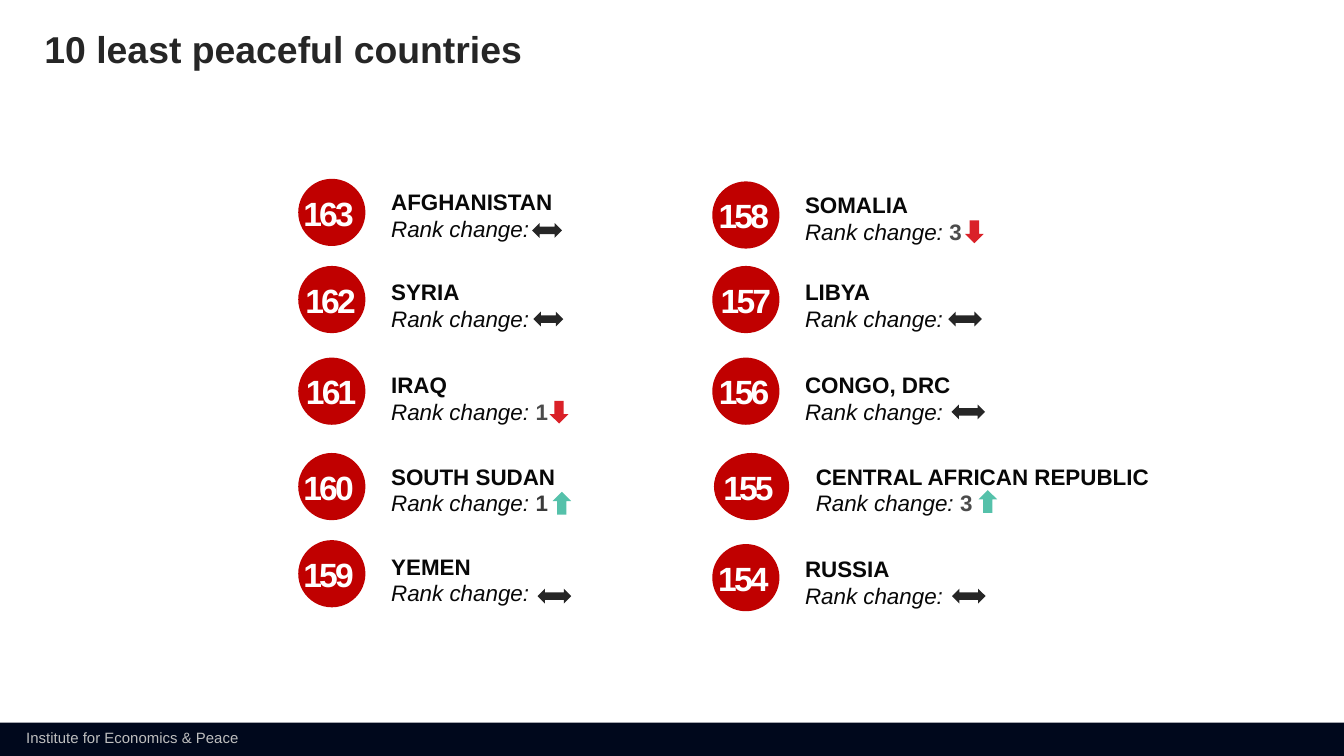
"""Build the slide that ranks the ten least peaceful countries."""
from dataclasses import dataclass

from pptx import Presentation
from pptx.dml.color import RGBColor
from pptx.enum.shapes import MSO_SHAPE
from pptx.enum.text import MSO_ANCHOR, MSO_AUTO_SIZE, PP_ALIGN
from pptx.shapes.autoshape import Shape
from pptx.shapes.shapetree import GroupShapes, SlideShapes
from pptx.text.text import TextFrame, _Paragraph, _Run
from pptx.util import Pt

RECTANGLE = MSO_SHAPE.RECTANGLE
OVAL = MSO_SHAPE.OVAL
UP_ARROW = MSO_SHAPE.UP_ARROW
LEVEL_ARROW = MSO_SHAPE.LEFT_RIGHT_ARROW
TOP, MIDDLE = MSO_ANCHOR.TOP, MSO_ANCHOR.MIDDLE
NO_FIT = MSO_AUTO_SIZE.NONE
LEFT, CENTER = PP_ALIGN.LEFT, PP_ALIGN.CENTER

WHITE = RGBColor(0xFF, 0xFF, 0xFF)
NAVY = RGBColor(0x00, 0x08, 0x1C)
SILVER = RGBColor(0xBF, 0xBF, 0xBF)
CHARCOAL = RGBColor(0x26, 0x26, 0x26)
INK = RGBColor(0x08, 0x08, 0x08)
GRAY = RGBColor(0x4B, 0x4B, 0x4B)
DARK_GRAY = RGBColor(0x3A, 0x3A, 0x3A)
CRIMSON = RGBColor(0xC0, 0x00, 0x00)
RED = RGBColor(0xDA, 0x21, 0x28)
GREEN = RGBColor(0x55, 0xC1, 0xAA)

FONT = "Arial"
BADGE_SIZE = 36
NUMBER_WIDTH, NUMBER_HEIGHT, NUMBER_DROP = 52, 28.8, 3.8
LABEL_HEIGHT = 34.5
LEFT_BADGE, RIGHT_BADGE = 159.8, 381.6
LEFT_LABEL, RIGHT_LABEL = 203.8, 425.5


@dataclass(frozen=True)
class Marker:
    """Arrow that shows the direction of a rank change."""
    kind: MSO_SHAPE
    color: RGBColor
    height: float
    rotation: float = 0


LEVEL = Marker(LEVEL_ARROW, CHARCOAL, 7.9)
BETTER = Marker(UP_ARROW, GREEN, 12.2)
WORSE = Marker(UP_ARROW, RED, 12.2, 180)


@dataclass(frozen=True)
class Country:
    """Ranked country with its positions in points."""
    rank: str
    name: str
    badge_left: float
    badge_top: float
    number_center: float
    label_left: float
    label_top: float
    label_width: float
    marker: Marker
    marker_left: float
    marker_top: float
    marker_width: float
    change: str = ""
    change_color: RGBColor = GRAY
    badge_width: float = BADGE_SIZE


COUNTRIES = (
    Country("163", "AFGHANISTAN", LEFT_BADGE, 95.8, 176, LEFT_LABEL, 97.9, 100.8,
            LEVEL, 285.1, 119.5, 16),
    Country("162", "SYRIA", LEFT_BADGE, 142.5, 177.1, LEFT_LABEL, 146.1, 100.8,
            LEVEL, 285.8, 167, 16),
    Country("161", "IRAQ", LEFT_BADGE, 191.6, 177.4, LEFT_LABEL, 195.8, 100.8,
            WORSE, 294.5, 214.7, 10, "1"),
    Country("160", "SOUTH SUDAN", LEFT_BADGE, 242.7, 176, LEFT_LABEL, 245, 100.8,
            BETTER, 296, 263.5, 10, "1", DARK_GRAY),
    Country("159", "YEMEN", LEFT_BADGE, 289.4, 176, LEFT_LABEL, 293.2, 149.8,
            LEVEL, 288, 315.4, 18),
    Country("158", "SOMALIA", RIGHT_BADGE, 97.2, 398.5, RIGHT_LABEL, 99.3, 128.2,
            WORSE, 517, 118.1, 10, "3"),
    Country("157", "LIBYA", RIGHT_BADGE, 142.5, 399.6, RIGHT_LABEL, 146.1, 190.8,
            LEVEL, 508, 167, 18),
    Country("156", "CONGO, DRC", RIGHT_BADGE, 191.6, 398.7, RIGHT_LABEL, 195.8, 149.8,
            LEVEL, 509.7, 216.7, 18),
    Country("155", "CENTRAL AFRICAN REPUBLIC", 382.5, 242.7, 401, 431.3, 245, 192.2,
            BETTER, 524.2, 262.6, 10, "3", GRAY, 40.3),
    Country("154", "RUSSIA", RIGHT_BADGE, 291.5, 398.3, RIGHT_LABEL, 294.7, 149.8,
            LEVEL, 510, 315.4, 18),
)


def add_span(para: _Paragraph, text: str, size: float, color: RGBColor,
             bold: bool = False, italic: bool = False) -> _Run:
    """Append one formatted run to a paragraph."""
    span = para.add_run()
    span.text = text
    span.font.name = FONT
    span.font.size = Pt(size)
    span.font.color.rgb = color
    span.font.bold = bold
    span.font.italic = italic
    return span


def set_frame(frame: TextFrame, side: float, edge: float,
              anchor: MSO_ANCHOR = TOP, wrap: bool = True) -> None:
    """Set the margins, anchor and wrapping of a text frame."""
    frame.margin_left = frame.margin_right = Pt(side)
    frame.margin_top = frame.margin_bottom = Pt(edge)
    frame.vertical_anchor = anchor
    frame.auto_size = NO_FIT
    frame.word_wrap = wrap


def add_solid(shapes: GroupShapes | SlideShapes, kind: MSO_SHAPE, left: float, top: float,
              width: float, height: float, color: RGBColor) -> Shape:
    """Draw a plain filled shape without an outline."""
    shape = shapes.add_shape(kind, Pt(left), Pt(top), Pt(width), Pt(height))
    shape.shadow.inherit = False
    shape.fill.solid()
    shape.fill.fore_color.rgb = color
    shape.line.fill.background()
    return shape


def add_country(shapes: SlideShapes, country: Country) -> None:
    """Draw one country as a group of label, badge, number and arrow."""
    parts = shapes.add_group_shape().shapes
    label = parts.add_textbox(Pt(country.label_left), Pt(country.label_top),
                              Pt(country.label_width), Pt(LABEL_HEIGHT)).text_frame
    set_frame(label, 5.76, 2.88)
    add_span(label.paragraphs[0], country.name, 12, INK, bold=True)
    para = label.add_paragraph()
    caption = "Rank change: " if country.change else "Rank change:"
    add_span(para, caption, 12, INK, italic=True)
    if country.change:
        add_span(para, country.change, 12, country.change_color, bold=True)

    add_solid(parts, OVAL, country.badge_left, country.badge_top,
              country.badge_width, BADGE_SIZE, CRIMSON)
    number = parts.add_textbox(Pt(country.number_center - NUMBER_WIDTH / 2),
                               Pt(country.badge_top + NUMBER_DROP),
                               Pt(NUMBER_WIDTH), Pt(NUMBER_HEIGHT)).text_frame
    set_frame(number, 7.2, 3.6)
    number.paragraphs[0].alignment = CENTER
    span = add_span(number.paragraphs[0], country.rank, 18, WHITE, bold=True)
    span.font._element.set("spc", "-150")

    marker = country.marker
    arrow = add_solid(parts, marker.kind, country.marker_left, country.marker_top,
                      country.marker_width, marker.height, marker.color)
    arrow.rotation = marker.rotation


def add_footer(shapes: SlideShapes) -> None:
    """Draw the dark bar with the publisher's name."""
    add_solid(shapes, RECTANGLE, 0, 387.2, 720, 17.8, NAVY)
    box = shapes.add_textbox(Pt(7), Pt(386.6), Pt(129.6), Pt(17))
    set_frame(box.text_frame, 7.2, 3.6, wrap=False)
    add_span(box.text_frame.paragraphs[0], "Institute for Economics & Peace", 8, SILVER)


def set_title(title: Shape) -> None:
    """Place and fill the title placeholder."""
    title.left, title.top = Pt(23.8), Pt(16.5)
    title.width, title.height = Pt(319.7), Pt(21.6)
    set_frame(title.text_frame, 0, 0, MIDDLE)
    para = title.text_frame.paragraphs[0]
    para.alignment = LEFT
    para.line_spacing = 0.9
    add_span(para, "10 least peaceful countries", 20, CHARCOAL, bold=True)


def main() -> None:
    """Build and save the deck."""
    deck = Presentation()
    deck.slide_width, deck.slide_height = Pt(720), Pt(405)
    page = deck.slides.add_slide(deck.slide_layouts.get_by_name("Title Only"))
    add_footer(page.shapes)
    set_title(page.shapes.title)
    for country in COUNTRIES:
        add_country(page.shapes, country)
    deck.save("out.pptx")


if __name__ == "__main__":
    main()
